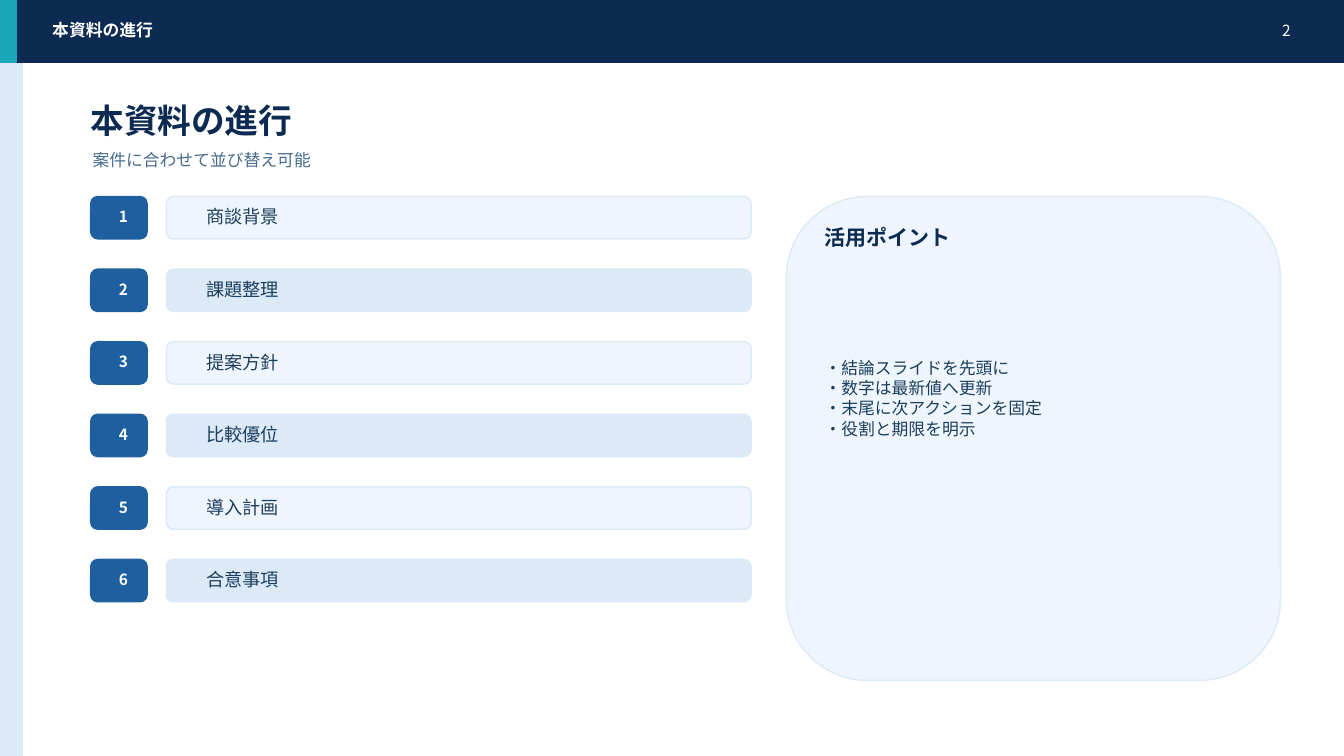
from lxml.etree import SubElement
from pptx import Presentation
from pptx.dml.color import RGBColor
from pptx.enum.shapes import MSO_SHAPE
from pptx.enum.text import MSO_ANCHOR, PP_ALIGN
from pptx.oxml.ns import qn
from pptx.util import Pt

PX = 9144  # EMU per px, 100 px to the inch
NAVY, BLUE, TEAL = "0D2A52", "1D5F9F", "1AA8B8"
SKY, PALE, WHITE = "DCEAF7", "EEF5FC", "FFFFFF"
INK, SLATE = "1C3E5E", "476B8C"


def color(code):
    return RGBColor.from_string(code)


class Deck:
    font = "Noto Sans CJK JP"

    def __init__(self, width, height):
        self.prs = Presentation()
        self.prs.slide_width = width * PX
        self.prs.slide_height = height * PX
        self.slide = self.prs.slides.add_slide(self.prs.slide_layouts[6])

    def box(self, x, y, w, h, fill, line=None, kind=MSO_SHAPE.RECTANGLE):
        shape = self.slide.shapes.add_shape(kind, x * PX, y * PX, w * PX, h * PX)
        shape.shadow.inherit = False
        shape.fill.solid()
        shape.fill.fore_color.rgb = color(fill)
        shape.line.color.rgb = color(line or fill)
        shape.line.width = Pt(1)

    def card(self, x, y, w, h, fill, line=None):
        self.box(x, y, w, h, fill, line, MSO_SHAPE.ROUNDED_RECTANGLE)

    def text(self, x, y, w, h, lines, size, ink, bold=False, align=PP_ALIGN.LEFT):
        area = self.slide.shapes.add_textbox(x * PX, y * PX, w * PX, h * PX)
        frame = area.text_frame
        frame.word_wrap = True
        frame.vertical_anchor = MSO_ANCHOR.MIDDLE
        for i, line in enumerate(lines):
            para = frame.add_paragraph() if i else frame.paragraphs[0]
            para.alignment = align
            self.run(para, line, size, ink, bold)

    def run(self, para, words, size, ink, bold):
        """Add one run, with the font set for Latin and Japanese letters."""
        run = para.add_run()
        run.text = words
        run.font.size = Pt(size)
        run.font.bold = bold
        run.font.color.rgb = color(ink)
        run.font.name = self.font
        SubElement(run.font._element, qn("a:ea"), typeface=self.font)

    def save(self):
        self.prs.save("out.pptx")


def header(deck):
    deck.box(0, 55, 22, 695, SKY)
    deck.box(0, 0, 1333, 62, NAVY)
    deck.box(0, 0, 16, 62, TEAL)
    deck.text(42, 17, 880, 26, ["本資料の進行"], 12, WHITE, bold=True)
    deck.text(1215, 17, 75, 26, ["2"], 11, WHITE, align=PP_ALIGN.RIGHT)
    deck.text(80, 95, 1140, 48, ["本資料の進行"], 24, NAVY, bold=True)
    deck.text(82, 144, 1120, 30, ["案件に合わせて並び替え可能"], 12, SLATE)


def agenda(deck, top=195, step=72):
    topics = ["商談背景", "課題整理", "提案方針", "比較優位", "導入計画", "合意事項"]
    for i, topic in enumerate(topics):
        y = top + i * step
        deck.card(90, y, 56, 42, BLUE)
        deck.text(108, y + 10, 20, 20, [str(i + 1)], 11, WHITE, True, PP_ALIGN.CENTER)
        deck.card(165, y, 580, 42, SKY if i % 2 else PALE, SKY)
        deck.text(195, y + 10, 520, 20, [topic], 13, INK)


def tips(deck):
    deck.card(780, 195, 490, 480, PALE, SKY)
    deck.text(808, 220, 410, 30, ["活用ポイント"], 15, NAVY, bold=True)
    points = [
        "・結論スライドを先頭に",
        "・数字は最新値へ更新",
        "・末尾に次アクションを固定",
        "・役割と期限を明示",
    ]
    deck.text(808, 270, 420, 250, points, 12, INK)


def main():
    deck = Deck(1333, 750)
    header(deck)
    agenda(deck)
    tips(deck)
    deck.save()


if __name__ == "__main__":
    main()
